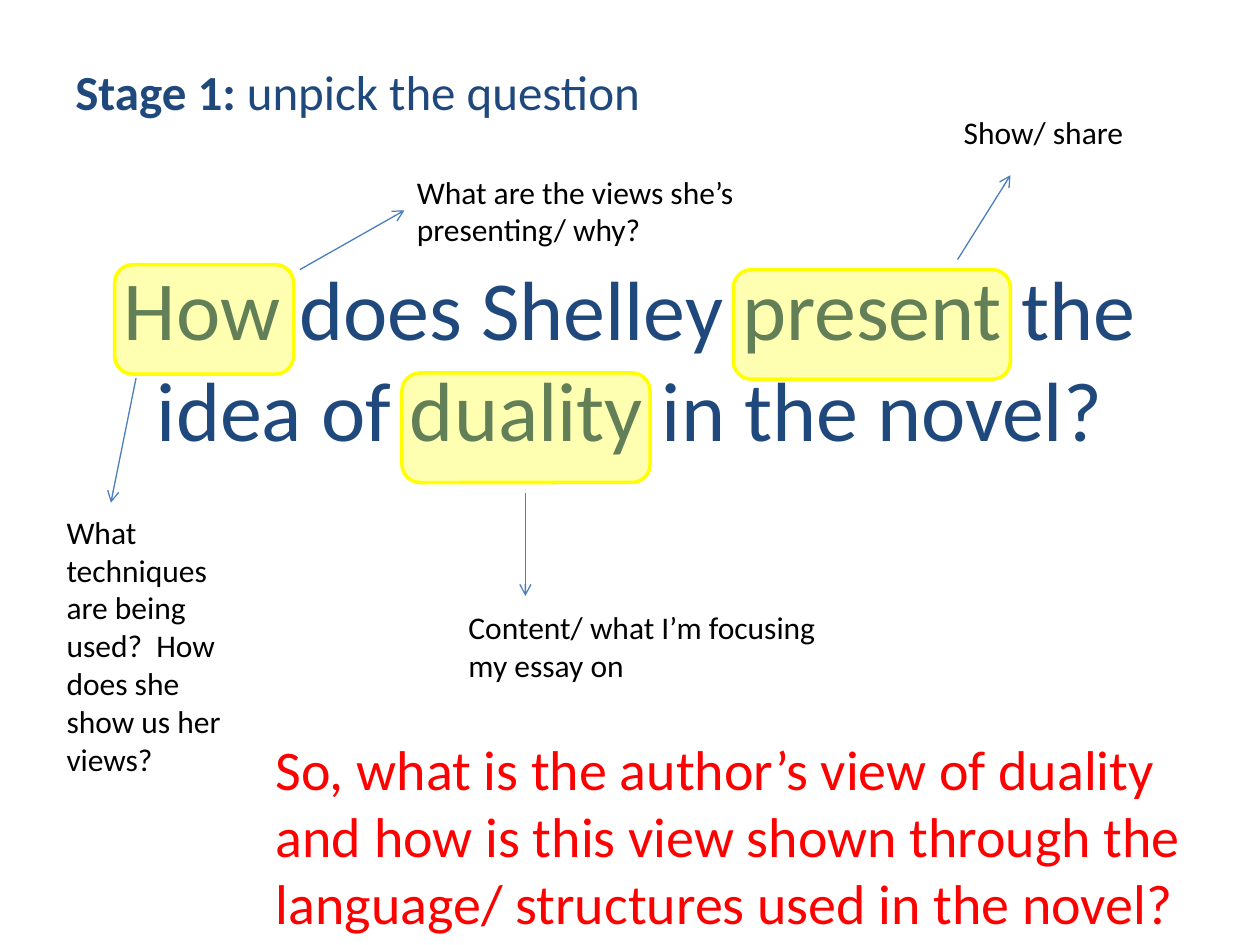
from typing import NamedTuple

from lxml.etree import SubElement
from pptx import Presentation
from pptx.dml.color import RGBColor
from pptx.enum.shapes import MSO_CONNECTOR, MSO_SHAPE
from pptx.enum.text import PP_ALIGN
from pptx.oxml.ns import qn
from pptx.slide import Slide
from pptx.text.text import Font, TextFrame
from pptx.util import Inches, Pt

NAVY, YELLOW, BLUE, BLACK, RED = "1F497D", "FFFF00", "4B7EBC", "000000", "FF0000"


class Highlight(NamedTuple):
    left: float
    top: float
    width: float


class Arrow(NamedTuple):
    start: tuple[float, float]
    end: tuple[float, float]


class Note(NamedTuple):
    text: str
    left: float
    top: float
    width: float
    height: float
    size: int = 18
    color: str = BLACK


HIGHLIGHTS = [
    Highlight(0.91, 2.1, 1.42),
    Highlight(5.82, 2.14, 2.2),
    Highlight(3.19, 2.96, 1.97),
]
ARROWS = [
    Arrow((1.08, 3), (0.88, 3.99)),
    Arrow((2.38, 2.14), (3.21, 1.67)),
    Arrow((7.6, 2.06), (8.02, 1.39)),
    Arrow((4.17, 3.91), (4.17, 4.73)),
]
NOTES = [
    Note("What are the views she’s presenting/ why?", 3.21, 1.32, 3.07, 0.71),
    Note("What techniques are being used?  How does she show us her views?",
         0.43, 4.02, 1.54, 2.22),
    Note("Show/ share", 7.55, 0.85, 1.79, 0.4),
    Note("Content/ what I’m focusing my essay on", 3.62, 4.78, 3.07, 0.71),
    Note("So, what is the author’s view of duality and how is this view shown "
         "through the language/ structures used in the novel?",
         2.09, 5.78, 7.91, 1.72, 32, RED),
]


def rgb(color: str) -> RGBColor:
    """Turn a hex string into a colour."""
    return RGBColor.from_string(color)


def set_font(font: Font, size: int, color: str) -> None:
    """Set typeface, size and colour."""
    font.name = "Calibri"
    font.size = Pt(size)
    font.color.rgb = rgb(color)


def add_frame(page: Slide, left: float, top: float, width: float, height: float) -> TextFrame:
    """Add a wrapping text box and return its frame."""
    box = page.shapes.add_textbox(Inches(left), Inches(top), Inches(width), Inches(height))
    box.text_frame.word_wrap = True
    return box.text_frame


def add_question(page: Slide) -> None:
    """Write the stage heading and the essay question."""
    frame = add_frame(page, 0.5, 0.44, 9, 6.26)
    heading = frame.paragraphs[0]
    set_font(heading.font, 28, NAVY)
    stage = heading.add_run()
    stage.text = "Stage 1:"
    stage.font.bold = True
    heading.add_run().text = " unpick the question"
    question = frame.add_paragraph()
    question.text = "How does Shelley present the idea of duality in the novel?"
    question.alignment = PP_ALIGN.CENTER
    question.space_before = Pt(78)
    set_font(question.font, 48, NAVY)


def add_highlight(page: Slide, highlight: Highlight) -> None:
    """Lay a translucent marker over a key word."""
    marker = page.shapes.add_shape(
        MSO_SHAPE.ROUNDED_RECTANGLE, Inches(highlight.left), Inches(highlight.top),
        Inches(highlight.width), Inches(0.87))
    marker.shadow.inherit = False
    marker.fill.solid()
    marker.fill.fore_color.rgb = rgb(YELLOW)
    fill_color = marker.fill._xPr.find(qn("a:solidFill"))[0]
    SubElement(fill_color, qn("a:alpha"), val="30000")
    marker.line.color.rgb = rgb(YELLOW)
    marker.line.width = Pt(2)


def add_arrow(page: Slide, arrow: Arrow) -> None:
    """Draw an arrow from a key word to its note."""
    connector = page.shapes.add_connector(
        MSO_CONNECTOR.STRAIGHT, *map(Inches, arrow.start + arrow.end))
    connector.line.color.rgb = rgb(BLUE)
    connector.line.width = Pt(0.75)
    SubElement(connector.line._get_or_add_ln(), qn("a:tailEnd"), type="arrow")
    SubElement(connector._element.spPr, qn("a:effectLst"))


def add_note(page: Slide, note: Note) -> None:
    """Write one annotation."""
    frame = add_frame(page, note.left, note.top, note.width, note.height)
    para = frame.paragraphs[0]
    para.text = note.text
    set_font(para.font, note.size, note.color)


def main() -> None:
    """Build and save the slide."""
    deck = Presentation()
    deck.slide_width, deck.slide_height = Inches(10), Inches(7.5)
    page = deck.slides.add_slide(deck.slide_layouts[6])
    add_question(page)
    for highlight in HIGHLIGHTS:
        add_highlight(page, highlight)
    for arrow in ARROWS:
        add_arrow(page, arrow)
    for note in NOTES:
        add_note(page, note)
    deck.save("out.pptx")


if __name__ == "__main__":
    main()
